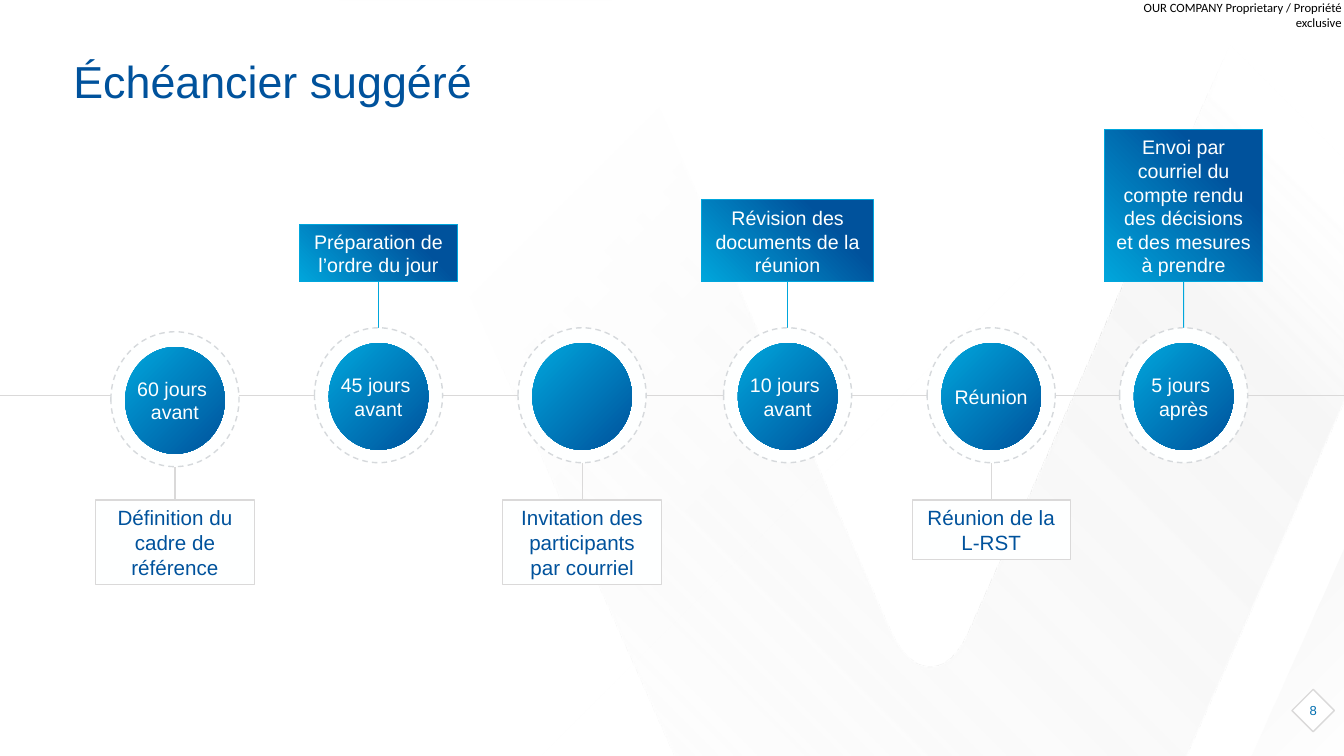
from dataclasses import dataclass

from lxml import etree
from pptx import Presentation
from pptx.dml.color import RGBColor
from pptx.enum.dml import MSO_LINE
from pptx.enum.shapes import MSO_CONNECTOR, MSO_SHAPE
from pptx.enum.text import MSO_ANCHOR, PP_ALIGN
from pptx.oxml.ns import qn
from pptx.util import Cm, Pt

RECTANGLE, OVAL, DIAMOND = MSO_SHAPE.RECTANGLE, MSO_SHAPE.OVAL, MSO_SHAPE.DIAMOND
STRAIGHT = MSO_CONNECTOR.STRAIGHT
DASH = MSO_LINE.DASH
TOP, MIDDLE, BOTTOM = MSO_ANCHOR.TOP, MSO_ANCHOR.MIDDLE, MSO_ANCHOR.BOTTOM
LEFT, CENTER, RIGHT = PP_ALIGN.LEFT, PP_ALIGN.CENTER, PP_ALIGN.RIGHT

NAVY, CYAN, WHITE, GREY, PALE = "00529C", "00A6DC", "FEFFFF", "DAD9D9", "F2F2F2"
SLIDE_WIDTH, SLIDE_HEIGHT = 33.87, 19.05
AXIS_Y = 9.96
RING_WIDTH, RING_HEIGHT = 3.23, 3.4
DISC_WIDTH, DISC_HEIGHT = 2.51, 2.69
ABOVE_BOTTOM, BELOW_TOP = 7.1, 12.6


@dataclass(frozen=True)
class Stop:
    position: int
    color: str
    opacity: int = 100


@dataclass(frozen=True)
class Milestone:
    center: float
    label: str
    task: str
    width: float
    height: float
    above: bool
    middle: float = 9.96


MILESTONES = [
    Milestone(4.41, "60 jours \vavant", "Définition du cadre de référence", 3.99, 2.13, False, 10.06),
    Milestone(9.54, "45 jours \vavant", "Préparation de l’ordre du jour", 3.99, 1.45, True),
    Milestone(14.67, "", "Invitation des participants par courriel", 3.99, 2.13, False),
    Milestone(19.85, "10 jours \vavant", "Révision des documents de la réunion", 4.32, 2.06, True),
    Milestone(24.98, "Réunion", "Réunion de la L-RST", 3.99, 1.5, False),
    Milestone(29.83, "5 jours \vaprès",
              "Envoi par courriel du compte rendu des décisions et des mesures à prendre",
              3.99, 3.84, True),
]


def rgb(color: str) -> RGBColor:
    return RGBColor.from_string(color)


def fill_gradient(shape, stops: list[Stop], angle: int = 0, focus: str = "") -> None:
    shape.fill.background()
    properties = shape._element.spPr
    gradient = etree.Element(qn("a:gradFill"), rotWithShape="1")
    stop_list = etree.SubElement(gradient, qn("a:gsLst"))
    for stop in stops:
        entry = etree.SubElement(stop_list, qn("a:gs"), pos=str(stop.position * 1000))
        color = etree.SubElement(entry, qn("a:srgbClr"), val=stop.color)
        if stop.opacity < 100:
            etree.SubElement(color, qn("a:alpha"), val=str(stop.opacity * 1000))
    if focus:
        circle = etree.SubElement(gradient, qn("a:path"), {"path": "circle"})
        edges = {side: "100000" for side in focus}
        etree.SubElement(circle, qn("a:fillToRect"), edges)
    else:
        etree.SubElement(gradient, qn("a:lin"), ang=str(angle * 60000), scaled="0")
    properties.replace(properties.find(qn("a:noFill")), gradient)


def add_shape(slide, kind, left: float, top: float, width: float, height: float,
              fill: str = "", line: str = "", weight: float = 1):
    shape = slide.shapes.add_shape(kind, Cm(left), Cm(top), Cm(width), Cm(height))
    shape.shadow.inherit = False
    if fill:
        shape.fill.solid()
        shape.fill.fore_color.rgb = rgb(fill)
    if line:
        shape.line.color.rgb = rgb(line)
        shape.line.width = Pt(weight)
    else:
        shape.line.fill.background()
    return shape


def write(shape, text: str, size: float, color: str, align=CENTER, anchor=MIDDLE,
          font: str = "Arial", wrap: bool = True, inset: tuple[float, float] = (0.25, 0.13)):
    frame = shape.text_frame
    frame.word_wrap = wrap
    frame.vertical_anchor = anchor
    frame.margin_left = frame.margin_right = Cm(inset[0])
    frame.margin_top = frame.margin_bottom = Cm(inset[1])
    paragraph = frame.paragraphs[0]
    paragraph.text = text
    paragraph.alignment = align
    paragraph.font.name = font
    paragraph.font.size = Pt(size)
    paragraph.font.color.rgb = rgb(color)
    return paragraph


def add_text(slide, left: float, top: float, width: float, height: float):
    return slide.shapes.add_textbox(Cm(left), Cm(top), Cm(width), Cm(height))


def add_line(slide, start: tuple[float, float], end: tuple[float, float],
             color: str, weight: float):
    line = slide.shapes.add_connector(STRAIGHT, *(Cm(value) for value in start + end))
    line.line.color.rgb = rgb(color)
    line.line.width = Pt(weight)
    etree.SubElement(line._element.spPr, qn("a:effectLst"))
    return line


def curve(points: list[tuple[float, float]], steps: int = 16) -> list[tuple[float, float]]:
    samples = []
    for step in range(steps + 1):
        t = step / steps
        weights = ((1 - t) ** 3, 3 * t * (1 - t) ** 2, 3 * t ** 2 * (1 - t), t ** 3)
        samples.append(tuple(sum(w * point[axis] for w, point in zip(weights, points))
                             for axis in (0, 1)))
    return samples


def add_outline(slide, points: list[tuple[float, float]], stops: list[Stop], focus: str) -> None:
    vertices = [(Cm(x), Cm(y)) for x, y in points]
    builder = slide.shapes.build_freeform(*vertices[0])
    builder.add_line_segments(vertices[1:], close=True)
    shape = builder.convert_to_shape()
    shape.shadow.inherit = False
    shape.line.fill.background()
    fill_gradient(shape, stops, focus=focus)


def add_background(slide) -> None:
    valley = curve([(22.43, 15.88), (22.99, 17.12), (23.9, 17.12), (24.43, 15.88)])
    ribbon = [(8.56, 0), (15.39, 0), *valley, (31.5, 0), (SLIDE_WIDTH, 0),
              (SLIDE_WIDTH, 10.06), (29.87, SLIDE_HEIGHT), (17.02, SLIDE_HEIGHT)]
    add_outline(slide, ribbon, [Stop(4, PALE, 0), Stop(75, PALE, 63), Stop(91, "FFFFFF", 0)], "tr")
    veil = add_shape(slide, RECTANGLE, 0, 0, 25.81, SLIDE_HEIGHT)
    fill_gradient(veil, [Stop(43, "FFFFFF"), Stop(73, "FFFFFF", 0)], 45)
    corner = [(SLIDE_WIDTH, 13.82), (31.55, SLIDE_HEIGHT), (SLIDE_WIDTH, SLIDE_HEIGHT)]
    add_outline(slide, corner, [Stop(0, PALE, 0), Stop(100, PALE, 63)], "lt")


def add_callout(slide, milestone: Milestone) -> None:
    above = milestone.above
    top = ABOVE_BOTTOM - milestone.height if above else BELOW_TOP
    box = add_shape(slide, RECTANGLE, milestone.center - milestone.width / 2, top,
                    milestone.width, milestone.height, WHITE, CYAN if above else GREY, 0.75)
    if above:
        fill_gradient(box, [Stop(26, NAVY), Stop(100, CYAN)], 135)
        write(box, milestone.task, 14, WHITE, anchor=BOTTOM)
    else:
        write(box, milestone.task, 14.7, NAVY, anchor=TOP)
    ring_edge = milestone.middle + RING_HEIGHT / 2 * (-1 if above else 1)
    box_edge = ABOVE_BOTTOM if above else BELOW_TOP
    leader = add_line(slide, (milestone.center, box_edge), (milestone.center, ring_edge),
                      CYAN if above else GREY, 0.75)
    leader.begin_connect(box, 2 if above else 0)


def add_marker(slide, milestone: Milestone) -> None:
    ring = add_shape(slide, OVAL, milestone.center - RING_WIDTH / 2,
                     milestone.middle - RING_HEIGHT / 2, RING_WIDTH, RING_HEIGHT, WHITE, "D6D9DC")
    ring.line.dash_style = DASH
    disc = add_shape(slide, OVAL, milestone.center - DISC_WIDTH / 2,
                     milestone.middle + 0.03 - DISC_HEIGHT / 2, DISC_WIDTH, DISC_HEIGHT)
    fill_gradient(disc, [Stop(0, CYAN), Stop(100, NAVY)], 45)
    if milestone.label:
        paragraph = write(disc, milestone.label, 14, WHITE, wrap=False, inset=(0.13, 0.13))
        paragraph.space_before = Pt(6)


def main() -> None:
    presentation = Presentation()
    presentation.slide_width, presentation.slide_height = Cm(SLIDE_WIDTH), Cm(SLIDE_HEIGHT)
    slide = presentation.slides.add_slide(presentation.slide_layouts[6])
    add_background(slide)
    write(add_text(slide, 27.64, 0, 6.17, 0.38), "OUR COMPANY Proprietary / Propriété exclusive",
          9, "000000", RIGHT, TOP, "Calibri", False, (0, 0))
    title = write(add_text(slide, 1.6, 1.45, 29.87, 1.35), "Échéancier suggéré", 32, NAVY, LEFT)
    title.line_spacing = 0.9
    page = add_shape(slide, DIAMOND, 32.56, 17.37, 1.07, 1.07, "FFFFFF", GREY)
    write(page, "8", 9.3, "006EB0", wrap=False)
    add_line(slide, (SLIDE_WIDTH, AXIS_Y), (0, AXIS_Y), GREY, 1)
    for milestone in MILESTONES:
        add_callout(slide, milestone)
        add_marker(slide, milestone)
    presentation.save("out.pptx")


if __name__ == "__main__":
    main()
